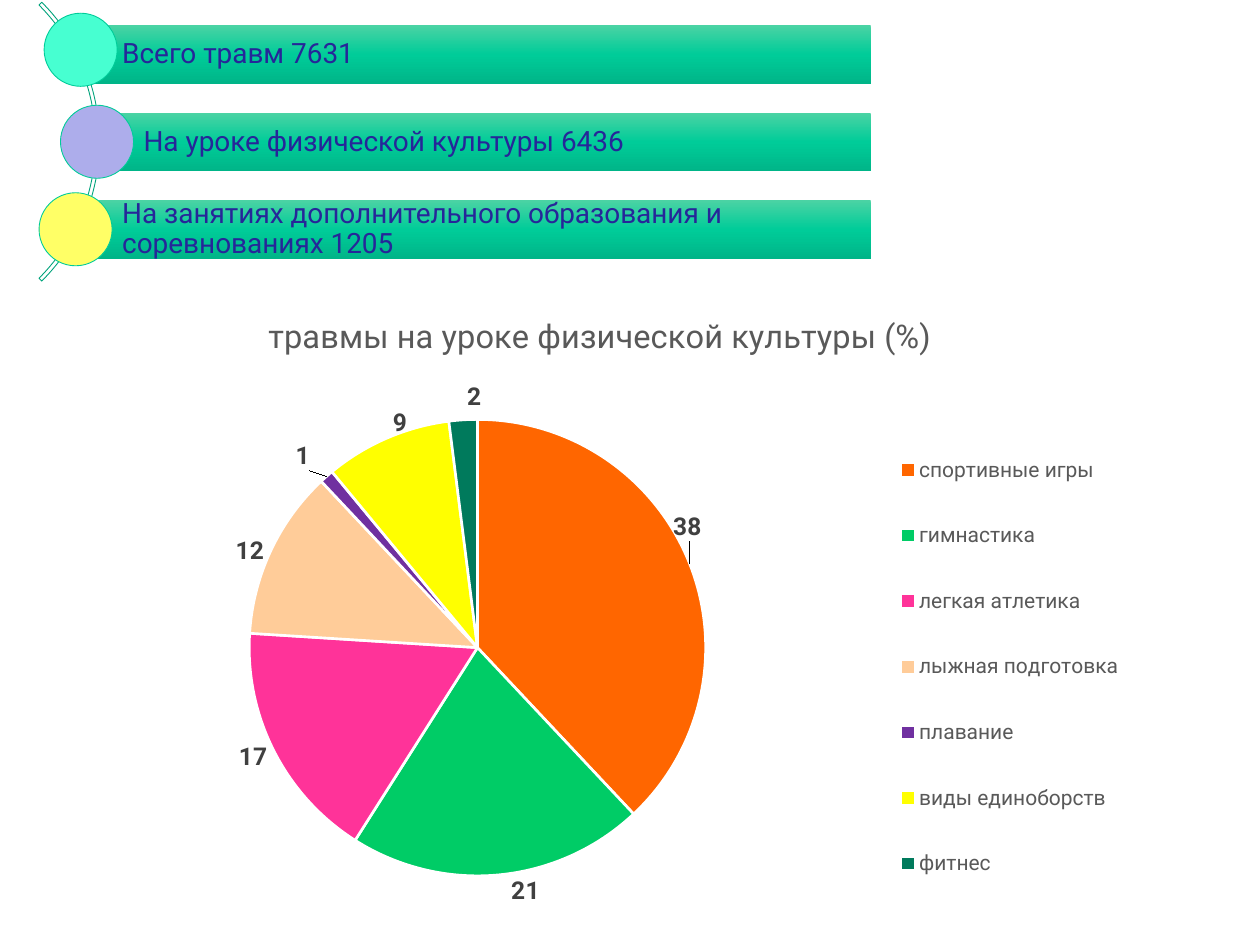
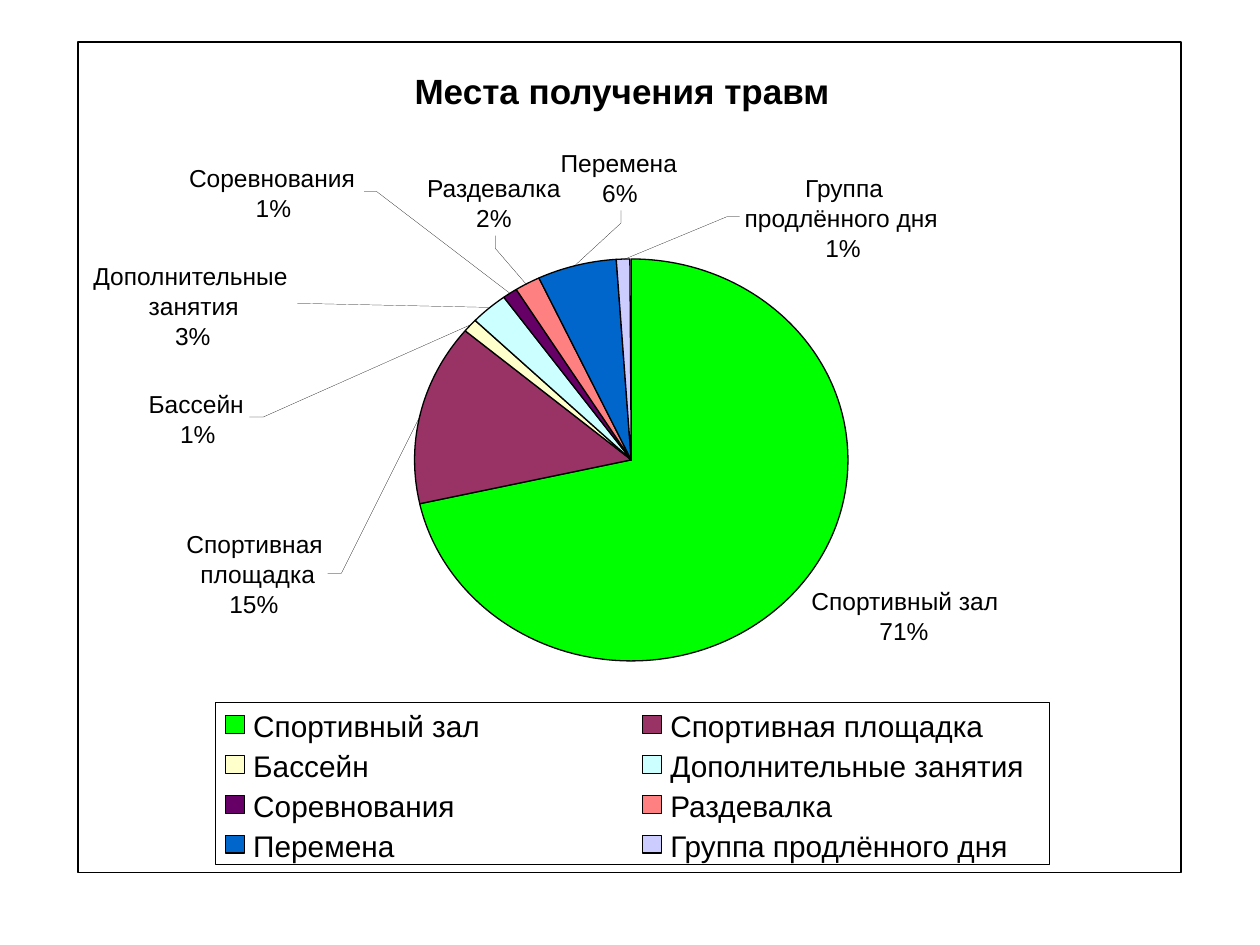
"""Two slides on school injuries: totals with a pie of lessons, and a pie of places."""
import copy
import math

import lxml.etree
import pptx
import pptx.chart.data
import pptx.dml.color
import pptx.enum.chart
import pptx.enum.shapes
import pptx.enum.text
import pptx.oxml
import pptx.oxml.ns
import pptx.util

Pt = pptx.util.Pt
qn = pptx.oxml.ns.qn
SHAPE = pptx.enum.shapes.MSO_SHAPE
ALIGN = pptx.enum.text.PP_ALIGN
ANCHOR = pptx.enum.text.MSO_ANCHOR
CHART = pptx.enum.chart

WIDTH, HEIGHT = pptx.util.Inches(10), pptx.util.Inches(7.5)
CELL = WIDTH / 100

COLORS = {
    "black": "000000", "white": "FFFFFF", "navy": "262699", "grey": "595959",
    "dark": "404040", "teal": "00CC99", "arc": "00A37B",
    "bar_top": "4BD3A4", "bar_bottom": "00B588",
}
NO_INSETS = {"margin_left": 0, "margin_right": 0, "margin_top": 0, "margin_bottom": 0}
HAIRLINE = 0.1

TOTALS = [
    ("Всего травм 7631", 6.0, (3.5, 1.05), "47FFD1"),
    ("На уроке физической культуры 6436", 7.7, (4.8, 8.35), "ADADEB"),
    ("На занятиях дополнительного образования и соревнованиях 1205", 6.0, (3.1, 15.3), "FFFF66"),
]
# Each kind of lesson: name, percent, colour, shift of its value label.
LESSONS = [
    ("спортивные игры", 38, "FF6600", (-0.02, -0.03)),
    ("гимнастика", 21, "00CC66", (0.01, -0.01)),
    ("легкая атлетика", 17, "FF3399", (0, -0.02)),
    ("лыжная подготовка", 12, "FFCC99", (0, 0.03)),
    ("плавание", 1, "7030A0", (-0.01, 0)),
    ("виды единоборств", 9, "FFFF00", (0.02, 0.01)),
    ("фитнес", 2, "007A5C", (0.01, 0)),
]
# Each place: label lines with left and width, label top, slice end in percent,
# colour, width of the legend name, leader line.
PLACES = [
    ([("Спортивный зал", 64.4, 16.2), ("71%", 69.8, 4.9)], 46.5, 71.5, "00FF00", 19.7, []),
    ([("Спортивная", 14.8, 12.7), ("площадка", 15.9, 10.2), ("15%", 18.2, 4.9)],
     42, 86.1, "993366", 26.8, [(26, 45.5), (27.1, 45.5), (33.4, 32.9)]),
    ([("Бассейн", 11.8, 8.6), ("1%", 14.3, 3.7)],
     30.9, 87.2, "FFFFCC", 10.6, [(19.8, 33.1), (20.9, 33.1), (37.3, 25.8)]),
    ([("Дополнительные", 7.4, 17.5), ("занятия", 11.8, 8.9), ("3%", 13.9, 3.7)],
     20.7, 90, "CCFFFF", 30.9, [(23.6, 24.1), (24.6, 24.1), (38.8, 24.4)]),
    ([("Соревнования", 15, 14.5), ("1%", 20.3, 3.7)],
     12.9, 91.1, "660066", 17.7, [(28.9, 15.2), (29.9, 15.2), (40.5, 23.3)]),
    ([("Раздевалка", 33.9, 12), ("2%", 37.8, 3.7)],
     13.7, 93, "FF8080", 14.5, [(39.3, 18.7), (39.3, 19.7), (41.8, 22.6)]),
    ([("Перемена", 44.5, 10.4), ("6%", 47.8, 3.7)],
     11.75, 98.9, "0066CC", 12.7, [(49.3, 16.7), (49.3, 17.7), (45.6, 21.1)]),
    ([("Группа", 63.9, 7.9), ("продлённого дня", 59.1, 16.8), ("1%", 65.5, 3.7)],
     13.7, 99.9, "CCCCFF", 29, [(58.7, 17.2), (57.7, 17.2), (49.5, 20.6)]),
]
PIE_CENTRE, PIE_RADII = (50.1, 36.5), (17.2, 15.95)


def cells(*lengths):
    """Turn grid lengths into slide units."""
    return [round(length * CELL) for length in lengths]


def rgb(color):
    """Read a colour by its name or its hex string."""
    return pptx.dml.color.RGBColor.from_string(COLORS.get(color, color))


def apply(target, values):
    """Set every attribute of the dict on the target."""
    for name, value in values.items():
        setattr(target, name, value)


def style_font(font, face, size, color, bold=False):
    """Set face, size, weight and colour of a font."""
    apply(font, {"name": face, "size": Pt(size), "bold": bold})
    font.color.rgb = rgb(color)


def paint(shape, fill=None, line=None, width=HAIRLINE):
    """Give a shape a flat fill and an outline, or none of them."""
    shape.shadow.inherit = False
    if fill:
        shape.fill.solid()
        shape.fill.fore_color.rgb = rgb(fill)
    else:
        shape.fill.background()
    if line:
        shape.line.color.rgb = rgb(line)
        shape.line.width = Pt(width)
    else:
        shape.line.fill.background()
    return shape


def add_figure(slide, kind, box, **look):
    """Add a painted preset shape at a grid box."""
    return paint(slide.shapes.add_shape(kind, *cells(*box)), **look)


def add_path(slide, points, close=False, **look):
    """Add a painted outline through grid points."""
    start, *rest = [cells(*point) for point in points]
    builder = slide.shapes.build_freeform(*start)
    builder.add_line_segments(rest, close=close)
    return paint(builder.convert_to_shape(), **look)


def add_text(slide, box, text, size):
    """Add one unwrapped black line of text without insets."""
    frame = slide.shapes.add_textbox(*cells(*box)).text_frame
    apply(frame, {"text": text, "word_wrap": False, **NO_INSETS})
    style_font(frame.paragraphs[0].font, "Arial", size, "black")


def shade_bar(bar):
    """Fill a bar with three green stops from top to bottom."""
    bar.fill.gradient()
    bar.fill.gradient_angle = 270
    stops = bar._element.spPr.find(".//" + qn("a:gsLst"))
    stops.append(copy.deepcopy(stops[-1]))
    shades = ("bar_top", "teal", "bar_bottom")
    for stop, position, shade in zip(bar.fill.gradient_stops, (0, 0.5, 1), shades):
        stop.position = position
        stop.color.rgb = rgb(shade)


def add_total(slide, row, text, left, disc, color):
    """Add one total: a shaded bar with text and a disc on its left end."""
    bar = add_figure(slide, SHAPE.RECTANGLE, (left, 2 + 6.95 * row, 69.1 - left, 4.65))
    shade_bar(bar)
    inset, edge = cells(3.7, 0.4)
    apply(bar.text_frame, {
        "text": text, "word_wrap": True, "vertical_anchor": ANCHOR.MIDDLE,
        "margin_left": inset, "margin_right": edge, "margin_top": edge, "margin_bottom": edge,
    })
    paragraph = bar.text_frame.paragraphs[0]
    apply(paragraph, {"alignment": ALIGN.LEFT, "line_spacing": 0.9})
    style_font(paragraph.font, "Roboto", 16, "navy")
    add_figure(slide, SHAPE.OVAL, (*disc, 5.8, 5.8), fill=color, line="teal", width=0.5)


def chart_layout(inner=False, **shares):
    """Build a manual layout element from shares of the chart."""
    target = '<c:layoutTarget val="inner"/>' if inner else ""
    modes = "".join(f'<c:{axis}Mode val="edge"/>' for axis in "xy") if "w" in shares else ""
    sizes = "".join(f'<c:{name} val="{share}"/>' for name, share in shares.items())
    return pptx.oxml.parse_xml(
        f'<c:layout {pptx.oxml.ns.nsdecls("c")}><c:manualLayout>{target}{modes}{sizes}'
        "</c:manualLayout></c:layout>")


def place_chart_parts(chart):
    """Fix the places of the pie and the legend."""
    plot_area = chart._chartSpace.find(".//" + qn("c:plotArea"))
    legend = chart.legend._element
    for part in (plot_area, legend):
        for layout in part.findall(qn("c:layout")):
            part.remove(layout)
    plot_area.insert(0, chart_layout(inner=True, x=0.2, y=0.2, w=0.39, h=0.72))
    legend.find(qn("c:legendPos")).addnext(chart_layout(x=0.75, y=0.2, w=0.2, h=0.78))


def label_slices(series, shifts):
    """Show bold values outside the slices, each moved by its shift."""
    outside = CHART.XL_LABEL_POSITION.OUTSIDE_END
    labels = series.data_labels
    apply(labels, {"show_value": True, "position": outside})
    style_font(labels.font, "Roboto", 14, "dark", True)
    for index in range(len(shifts)):
        label = series.points[index].data_label
        style_font(label.font, "Roboto", 14, "dark", True)
        label.position = outside
    for label, (x, y) in zip(list(series._element.iter(qn("c:dLbl"))), shifts):
        label.insert(1, chart_layout(x=x, y=y))


def add_lesson_chart(slide):
    """Add the pie chart of injuries by kind of lesson."""
    heading = "травмы на уроке физической культуры (%)"
    names, values, colors, shifts = zip(*LESSONS)
    data = pptx.chart.data.CategoryChartData()
    data.categories = names
    data.add_series(heading, values)
    chart = slide.shapes.add_chart(
        CHART.XL_CHART_TYPE.PIE, *cells(1.2, 22.9, 92.9, 50.9), data).chart
    style_font(chart.font, "Roboto", 10, "black")
    chart.chart_title.text_frame.text = heading
    style_font(chart.chart_title.text_frame.paragraphs[0].font, "Roboto", 18.6, "grey")
    chart.has_legend = True
    apply(chart.legend, {"position": CHART.XL_LEGEND_POSITION.RIGHT, "include_in_layout": False})
    style_font(chart.legend.font, "Roboto", 12, "grey")
    chart.plots[0].vary_by_categories = True
    series = chart.plots[0].series[0]
    for index, color in enumerate(colors):
        look = series.points[index].format
        look.fill.solid()
        look.fill.fore_color.rgb = rgb(color)
        look.line.color.rgb = rgb("white")
        look.line.width = Pt(1.5)
    label_slices(series, shifts)
    place_chart_parts(chart)


def rim_point(percent, lead=0):
    """Find a point on the pie's rim, moved along its tangent by a lead."""
    angle = math.tau * percent / 100
    return (PIE_CENTRE[0] + PIE_RADII[0] * (math.sin(angle) + lead * math.cos(angle)),
            PIE_CENTRE[1] - PIE_RADII[1] * (math.cos(angle) - lead * math.sin(angle)))


def add_slice(slide, start, end, color):
    """Add one slice of the oval pie, its rim curved and split at the quarters."""
    stops = [start, *(quarter for quarter in (25, 50, 75) if start < quarter < end), end]
    points = [rim_point(start)]
    for first, last in zip(stops, stops[1:]):
        lead = 4 / 3 * math.tan(math.tau * (last - first) / 400)
        points += [rim_point(first, lead), rim_point(last, -lead), rim_point(last)]
    wedge = add_path(slide, [*points, PIE_CENTRE], close=True,
                     fill=color, line="black", width=0.75)
    sides = list(wedge._element.iter(qn("a:lnTo")))
    for arc in range(len(stops) - 1):
        trio = sides[3 * arc:3 * arc + 3]
        curve = lxml.etree.Element(qn("a:cubicBezTo"))
        trio[0].addprevious(curve)
        for side in trio:
            curve.append(side[0])
            side.getparent().remove(side)


def add_legend_entry(slide, index, name, width, color):
    """Add a swatch and a name in the two-column legend."""
    row, column = divmod(index, 2)
    left, top = 17.9 + 33.1 * column, 56.2 + 3.17 * row
    add_figure(slide, SHAPE.RECTANGLE, (left, top + 0.6, 1.5, 1.4),
               fill=color, line="black", width=0.75)
    add_text(slide, (left + 2.2, top, width, 3.1), name, 17)


def add_places_title(slide):
    """Format the title placeholder as the heading of the places pie."""
    title = slide.shapes.title
    apply(title, dict(zip(("left", "top", "width", "height"), cells(32.9, 5.5, 35.5, 3.7))))
    apply(title.text_frame, {
        "text": "Места получения травм", "word_wrap": False, "vertical_anchor": ANCHOR.TOP,
        "auto_size": pptx.enum.text.MSO_AUTO_SIZE.NONE, **NO_INSETS,
    })
    paragraph = title.text_frame.paragraphs[0]
    paragraph.alignment = ALIGN.LEFT
    style_font(paragraph.font, "Arial", 20, "black", True)


def build_totals(slide):
    """Build the slide of totals and lessons."""
    arc = add_figure(slide, SHAPE.BLOCK_ARC, (-23.4, -4.4, 31.3, 31.3), line="arc", width=0.5)
    for index, value in enumerate((189, 27, 0.01)):
        arc.adjustments[index] = value
    for row, total in enumerate(TOTALS):
        add_total(slide, row, *total)
    add_lesson_chart(slide)


def build_places(slide):
    """Build the slide of places with its oval pie."""
    add_places_title(slide)
    add_figure(slide, SHAPE.RECTANGLE, (6.2, 3.35, 87.55, 65.9), line="black", width=1)
    add_figure(slide, SHAPE.RECTANGLE, (17.1, 55.7, 66.2, 12.9), fill="white", line="black")
    start = 0
    for index, (lines, top, end, color, name_width, leader) in enumerate(PLACES):
        add_slice(slide, start, end, color)
        start = end
        if leader:
            add_path(slide, leader, line="black")
        for row, (text, left, width) in enumerate(lines):
            add_text(slide, (left, top + 2.38 * row, width, 2.5), text, 14)
        name = " ".join(text for text, *_ in lines[:-1])
        add_legend_entry(slide, index, name, name_width, color)


def main():
    """Build and save both slides."""
    deck = pptx.Presentation()
    apply(deck, {"slide_width": WIDTH, "slide_height": HEIGHT})
    title_only, blank = deck.slide_layouts[5], deck.slide_layouts[6]
    build_totals(deck.slides.add_slide(blank))
    build_places(deck.slides.add_slide(title_only))
    deck.save("out.pptx")


if __name__ == "__main__":
    main()
